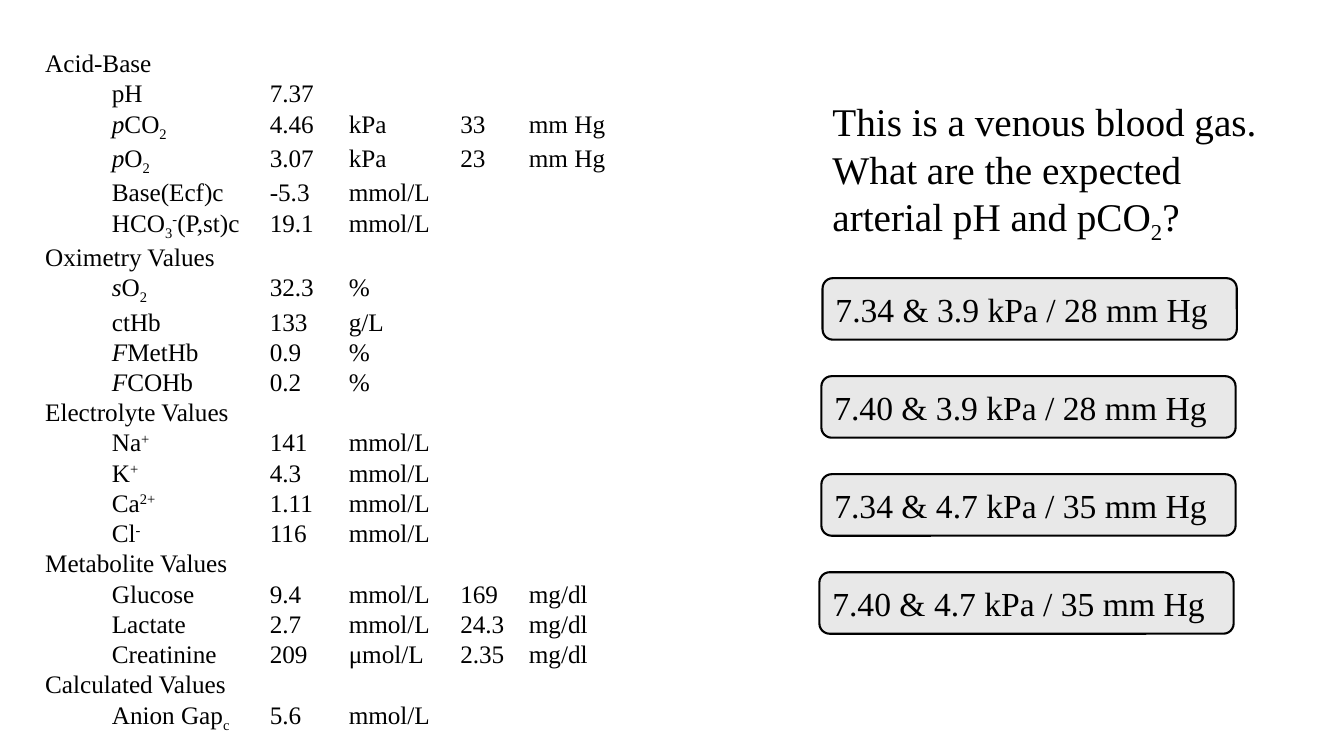
import pptx
import pptx.util
import pptx.dml.color
import pptx.enum.shapes
import pptx.enum.text
from lxml import etree
from pptx.util import Cm

COLORS = {"text": "000000", "button": "E8E8E8", "border": "000000"}
FONT = "Times New Roman"
DRAWING_NS = "http://schemas.openxmlformats.org/drawingml/2006/main"
BASELINES = {"sub": "-25000", "sup": "30000"}
TAB_STOPS = [0.58, 1.68, 5.66, 7.65, 10.46, 12.19]

QUESTION = [("This is a venous blood gas. What are the expected arterial pH and pCO", ""),
            ("2", "sub"), ("?", "")]

ANSWERS = [
    (20.73, "7.34 & 3.9 kPa / 28 mm Hg"),
    (20.7, "7.40 & 3.9 kPa / 28 mm Hg"),
    (20.7, "7.34 & 4.7 kPa / 35 mm Hg"),
    (20.65, "7.40 & 4.7 kPa / 35 mm Hg"),
]

RESULTS = [
    ("Acid-Base", [
        ([("pH", "")], ["7.37"]),
        ([("p", "italic"), ("CO", ""), ("2", "sub")], ["4.46", "kPa", "33", "mm Hg"]),
        ([("p", "italic"), ("O", ""), ("2", "sub")], ["3.07", "kPa", "23", "mm Hg"]),
        ([("Base(Ecf)c", "")], ["-5.3", "mmol/L"]),
        ([("HCO", ""), ("3", "sub"), ("-", "sup"), ("(P,st)c", "")], ["19.1", "mmol/L"]),
    ]),
    ("Oximetry Values", [
        ([("s", "italic"), ("O", ""), ("2", "sub")], ["32.3", "%"]),
        ([("ctHb", "")], ["133", "g/L"]),
        ([("F", "italic"), ("MetHb", "")], ["0.9", "%"]),
        ([("F", "italic"), ("COHb", "")], ["0.2", "%"]),
    ]),
    ("Electrolyte Values", [
        ([("Na", ""), ("+", "sup")], ["141", "mmol/L"]),
        ([("K", ""), ("+", "sup")], ["4.3", "mmol/L"]),
        ([("Ca", ""), ("2+", "sup")], ["1.11", "mmol/L"]),
        ([("Cl", ""), ("-", "sup")], ["116", "mmol/L"]),
    ]),
    ("Metabolite Values", [
        ([("Glucose", "")], ["9.4", "mmol/L", "169", "mg/dl"]),
        ([("Lactate", "")], ["2.7", "mmol/L", "24.3", "mg/dl"]),
        ([("Creatinine", "")], ["209", "μmol/L", "2.35", "mg/dl"]),
    ]),
    ("Calculated Values", [
        ([("Anion Gap", ""), ("c", "sub")], ["5.6", "mmol/L"]),
    ]),
]


def rgb(name):
    return pptx.dml.color.RGBColor.from_string(COLORS[name])


def set_attrs(obj, values):
    for name, value in values.items():
        setattr(obj, name, value)


def add_runs(p, runs, size):
    for text, style in runs:
        r = p.add_run()
        r.text = text
        set_attrs(r.font, {"name": FONT, "size": pptx.util.Pt(size)})
        r.font.color.rgb = rgb("text")
        if style == "italic":
            r.font.italic = True
        elif style in BASELINES:
            r._r.get_or_add_rPr().set("baseline", BASELINES[style])


def add_tabs(p):
    tabs = etree.SubElement(p._p.get_or_add_pPr(), f"{{{DRAWING_NS}}}tabLst")
    for stop in TAB_STOPS:
        etree.SubElement(tabs, f"{{{DRAWING_NS}}}tab", pos=str(int(Cm(stop))), algn="l")


def add_text_box(s, left, top, width, height):
    tf = s.shapes.add_textbox(Cm(left), Cm(top), Cm(width), Cm(height)).text_frame
    set_attrs(tf, {"word_wrap": True,
                   "auto_size": pptx.enum.text.MSO_AUTO_SIZE.SHAPE_TO_FIT_TEXT})
    return tf


def add_answer(s, left, top, text):
    sp = s.shapes.add_shape(pptx.enum.shapes.MSO_SHAPE.ROUNDED_RECTANGLE,
                            Cm(left), Cm(top), Cm(10.44), Cm(1.55))
    sp.shadow.inherit = False
    sp.fill.solid()
    sp.fill.fore_color.rgb = rgb("button")
    sp.line.color.rgb = rgb("border")
    sp.line.width = pptx.util.Pt(1.5)
    tf = sp.text_frame
    set_attrs(tf, {"word_wrap": True,
                   "vertical_anchor": pptx.enum.text.MSO_ANCHOR.MIDDLE})
    p = tf.paragraphs[0]
    p.alignment = pptx.enum.text.PP_ALIGN.LEFT
    add_runs(p, [(text, "")], 24)


def add_results(s):
    lines = []
    for heading, rows in RESULTS:
        lines.append([(heading, "")])
        for label, values in rows:
            lines.append([("\t\t", ""), *label, ("\t" + "\t".join(values), "")])
    tf = add_text_box(s, 0.89, 1.07, 15.82, 17.2)
    for i, runs in enumerate(lines):
        p = tf.add_paragraph() if i else tf.paragraphs[0]
        add_tabs(p)
        add_runs(p, runs, 18)


def main():
    prs = pptx.Presentation()
    set_attrs(prs, {"slide_width": Cm(33.87), "slide_height": Cm(19.05)})
    s = prs.slides.add_slide(prs.slide_layouts[6])
    tf = add_text_box(s, 20.73, 2.34, 11.89, 3.84)
    add_runs(tf.paragraphs[0], QUESTION, 28)
    for i, (left, text) in enumerate(ANSWERS):
        add_answer(s, left, 7.01 + 2.47 * i, text)
    add_results(s)
    prs.save("out.pptx")


if __name__ == "__main__":
    main()
